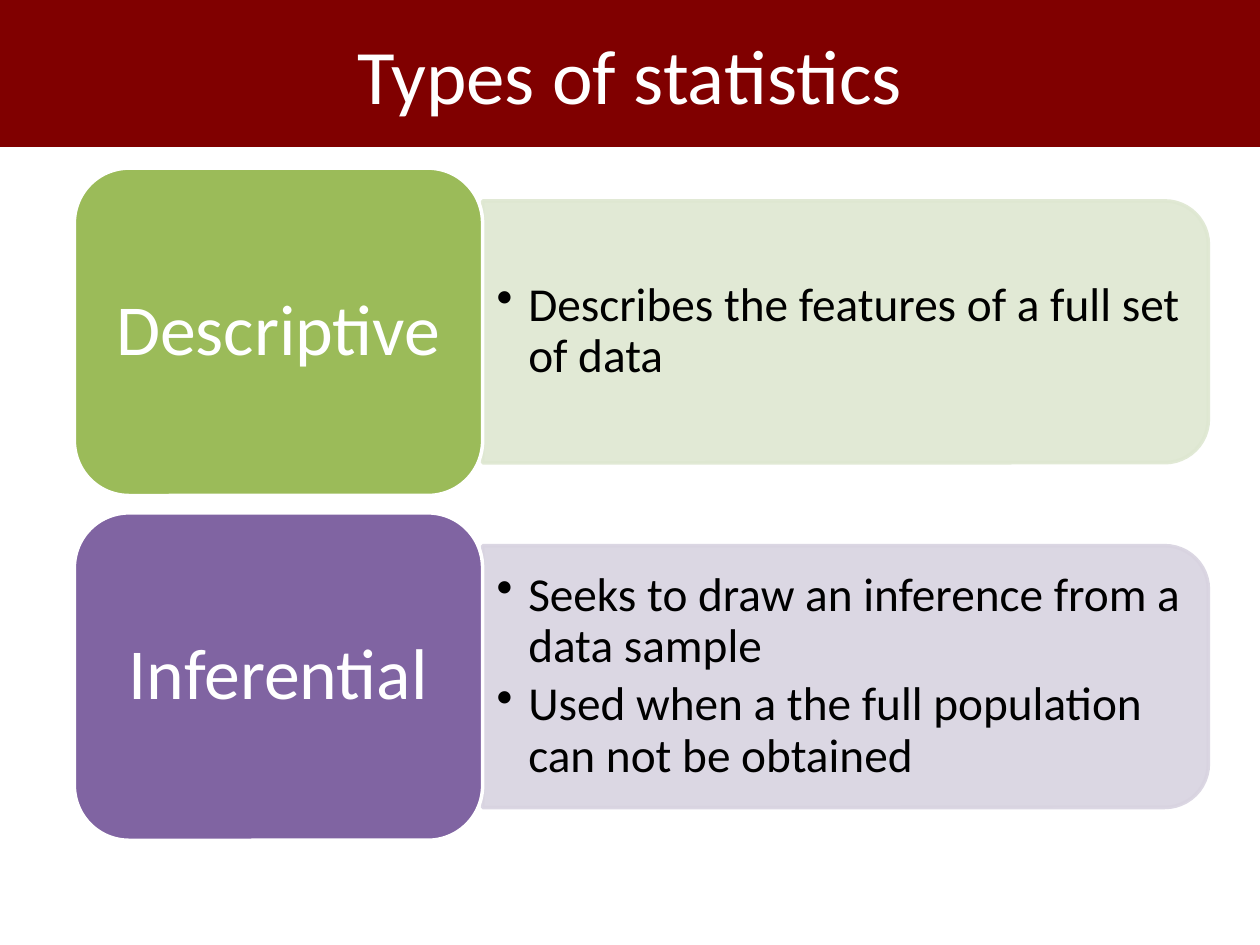
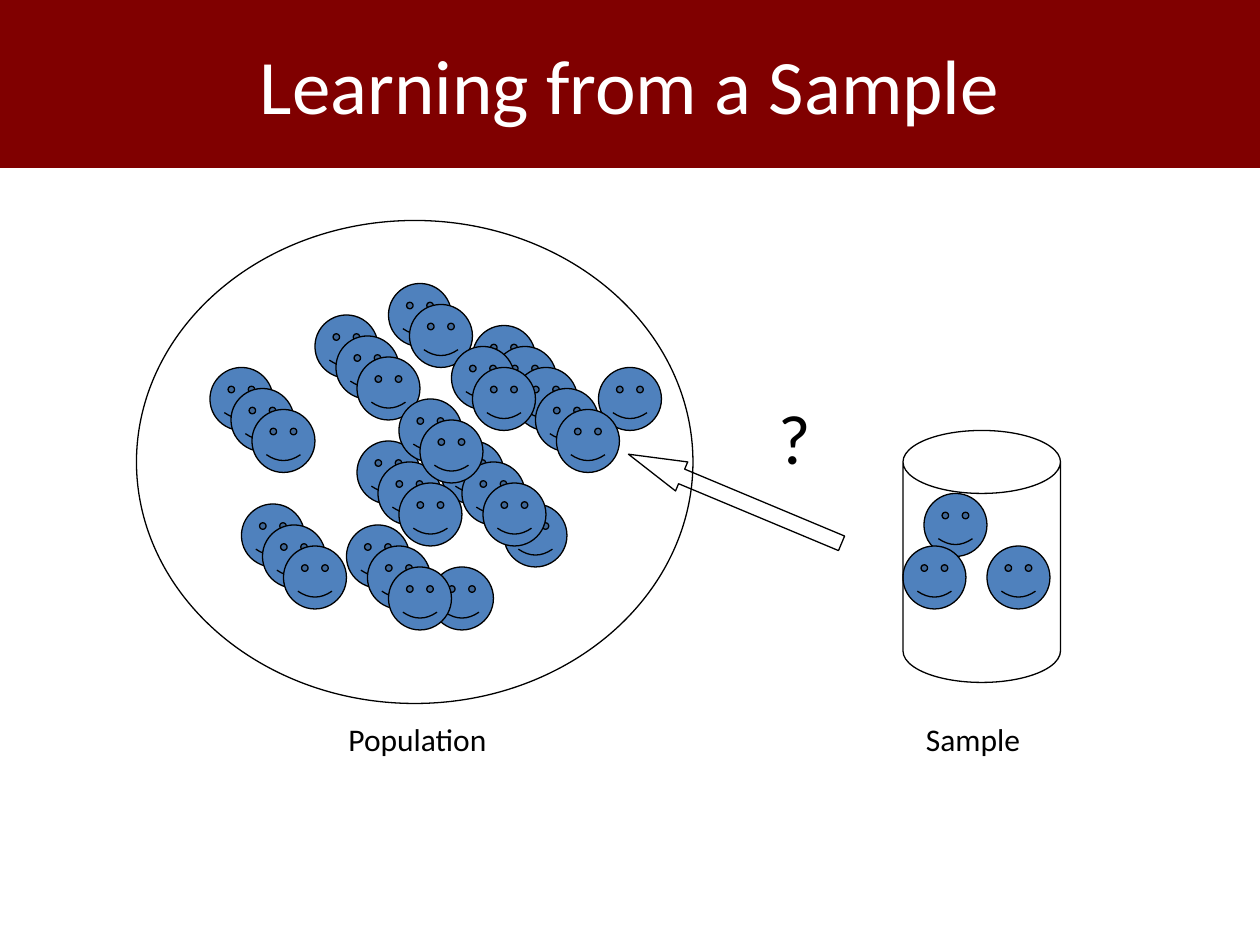
from dataclasses import dataclass

from lxml.etree import SubElement
from pptx import Presentation
from pptx.dml.color import RGBColor
from pptx.enum.shapes import MSO_SHAPE
from pptx.enum.text import MSO_ANCHOR, PP_ALIGN
from pptx.oxml.ns import qn
from pptx.util import Cm, Pt


@dataclass(frozen=True)
class Theme:
    font: str = "Calibri"
    band: str = "800000"
    white: str = "FFFFFF"
    black: str = "000000"
    face: str = "4F81BD"
    green: str = "9BBB59"
    pale_green: str = "DEE7D1"
    purple: str = "8064A2"
    pale_purple: str = "D8D3E0"
    title_size: int = 44
    tile_size: int = 41
    question_size: int = 40
    bullet_size: int = 27
    label_size: int = 18
    outline: float = 0.75
    tile_outline: float = 2


THEME = Theme()
SLIDE_WIDTH, SLIDE_HEIGHT = 25.4, 19.05
GRID = SLIDE_WIDTH / 120
FACE_SIZE = 6 * GRID
CHAIN_STEP = 2 * GRID

# Each chain of faces runs down to the right: column, row (grid units), count
POPULATION_CHAINS = [
    (17, 9, 3), (24, 6, 2), (44, 14, 1), (32, 10, 5), (30, 12, 2),
    (35, 27, 1), (28, 33, 1), (29, 21, 3), (21, 21, 3), (25, 17, 2),
    (10, 27, 3), (7, 14, 3), (20, 29, 3),
]
SAMPLE_CHAINS = [(2, 6, 1), (8, 11, 1), (0, 11, 1)]


def add_shape(slide, kind, box, fill=None, line=None, line_width=THEME.outline):
    shape = slide.shapes.add_shape(kind, *map(Cm, box))
    shape.shadow.inherit = False
    if fill:
        shape.fill.solid()
        shape.fill.fore_color.rgb = RGBColor.from_string(fill)
    else:
        shape.fill.background()
    if line:
        shape.line.color.rgb = RGBColor.from_string(line)
        shape.line.width = Pt(line_width)
    else:
        shape.line.fill.background()
    return shape


def format_paragraph(paragraph, size, color, align=PP_ALIGN.LEFT):
    paragraph.alignment = align
    for run in paragraph.runs:
        run.font.name = THEME.font
        run.font.size = Pt(size)
        run.font.color.rgb = RGBColor.from_string(color)


def write_centred(shape, text, size):
    frame = shape.text_frame
    frame.text = text
    frame.word_wrap = True
    frame.vertical_anchor = MSO_ANCHOR.MIDDLE
    format_paragraph(frame.paragraphs[0], size, THEME.white, PP_ALIGN.CENTER)
    return frame


def add_label(slide, text, box, size=THEME.label_size, wrap=True):
    frame = slide.shapes.add_textbox(*map(Cm, box)).text_frame
    frame.text = text
    frame.word_wrap = wrap
    format_paragraph(frame.paragraphs[0], size, THEME.black)


def add_title_band(slide, text, height):
    band = add_shape(slide, MSO_SHAPE.RECTANGLE, (0, 0, SLIDE_WIDTH, height), THEME.band)
    write_centred(band, text, THEME.title_size)


def make_translucent(shape, percent):
    for color in shape.element.spPr.iter(qn("a:srgbClr")):
        SubElement(color, qn("a:alpha"), val=str(percent * 1000))


def add_bullet(paragraph):
    properties = paragraph._p.get_or_add_pPr()
    indent = Cm(0.64)
    properties.set("marL", str(indent))
    properties.set("indent", str(-indent))
    SubElement(properties, qn("a:buChar"), char="•")


def add_bullet_panel(slide, box, color, bullets):
    """Panel rounded on its right side, with an upright text box over it."""
    left, top, width, height = box
    turned_box = (left + (width - height) / 2, top + (height - width) / 2, height, width)
    panel = add_shape(slide, MSO_SHAPE.ROUND_2_SAME_RECTANGLE, turned_box,
                      color, color, THEME.tile_outline)
    panel.rotation = 90
    make_translucent(panel, 90)

    text_box = (left, top + 0.25, width - 0.25, height - 0.5)
    frame = slide.shapes.add_textbox(*map(Cm, text_box)).text_frame
    frame.text = "\n".join(bullets)
    frame.word_wrap = True
    frame.vertical_anchor = MSO_ANCHOR.MIDDLE
    frame.margin_left = frame.margin_right = Cm(0.28)
    frame.margin_top = frame.margin_bottom = Cm(0.15)
    for paragraph in frame.paragraphs:
        format_paragraph(paragraph, THEME.bullet_size, THEME.black)
        paragraph.line_spacing = 0.9
        paragraph.space_after = Pt(4)
        add_bullet(paragraph)


def add_statistics_row(slide, box, name, color, pale_color, bullets):
    left, top, width, height = box
    tile_width, inset = 8.23, 0.66
    panel_box = (left + tile_width, top + inset, width - tile_width, height - 2 * inset)
    add_bullet_panel(slide, panel_box, pale_color, bullets)
    tile = add_shape(slide, MSO_SHAPE.ROUNDED_RECTANGLE, (left, top, tile_width, height),
                     color, THEME.white, THEME.tile_outline)
    frame = write_centred(tile, name, THEME.tile_size)
    frame.margin_left = frame.margin_right = Cm(0.43)
    frame.paragraphs[0].line_spacing = 0.9


def add_faces(slide, left, top, chains):
    for column, row, count in chains:
        for link in range(count):
            box = (left + column * GRID + link * CHAIN_STEP,
                   top + row * GRID + link * CHAIN_STEP, FACE_SIZE, FACE_SIZE)
            add_shape(slide, MSO_SHAPE.SMILEY_FACE, box, THEME.face, THEME.black)


def add_population(slide, box):
    left, top, width, height = box
    add_shape(slide, MSO_SHAPE.OVAL, box, line=THEME.black)
    add_faces(slide, left, top, POPULATION_CHAINS)
    add_label(slide, "Population", (left + 19 * GRID, top + height + GRID, 22 * GRID, 1.02))


def add_sample(slide, box):
    left, top, width, height = box
    add_faces(slide, left, top, SAMPLE_CHAINS)
    can = add_shape(slide, MSO_SHAPE.CAN, box, line=THEME.black)
    can.adjustments[0] = 0.4
    add_label(slide, "Sample", (left + GRID, top + height + 3 * GRID, 13 * GRID, 1.02))


def add_inference_arrow(slide, box):
    left, top, width, height = box
    arrow = add_shape(slide, MSO_SHAPE.LEFT_ARROW, box, line=THEME.black)
    arrow.adjustments[1] = 1.83
    arrow.rotation = 22.7
    add_label(slide, "?", (left + 14 * GRID, top - 9 * GRID, 1.17, 1.96),
              THEME.question_size, wrap=False)


def build_types_slide(slide):
    add_title_band(slide, "Types of statistics", 14 * GRID)
    rows = [
        ("Descriptive", THEME.green, THEME.pale_green,
         ["Describes the features of a full set of data"]),
        ("Inferential", THEME.purple, THEME.pale_purple,
         ["Seeks to draw an inference from a data sample",
          "Used when a the full population can not be obtained"]),
    ]
    top, height, gap = 3.39, 6.6, 0.35
    for index, row in enumerate(rows):
        add_statistics_row(slide, (1.5, top + index * (height + gap), 22.86, height), *row)


def build_sample_slide(slide):
    add_title_band(slide, "Learning from a Sample", 16 * GRID)
    add_population(slide, (13 * GRID, 21 * GRID, 53 * GRID, 46 * GRID))
    add_inference_arrow(slide, (59 * GRID, 46 * GRID, 22 * GRID, 3 * GRID))
    add_sample(slide, (86 * GRID, 41 * GRID, 15 * GRID, 24 * GRID))


def main():
    presentation = Presentation()
    presentation.slide_width = Cm(SLIDE_WIDTH)
    presentation.slide_height = Cm(SLIDE_HEIGHT)
    blank_layout = presentation.slide_layouts[6]
    for build in (build_types_slide, build_sample_slide):
        build(presentation.slides.add_slide(blank_layout))
    presentation.save("out.pptx")


if __name__ == "__main__":
    main()
